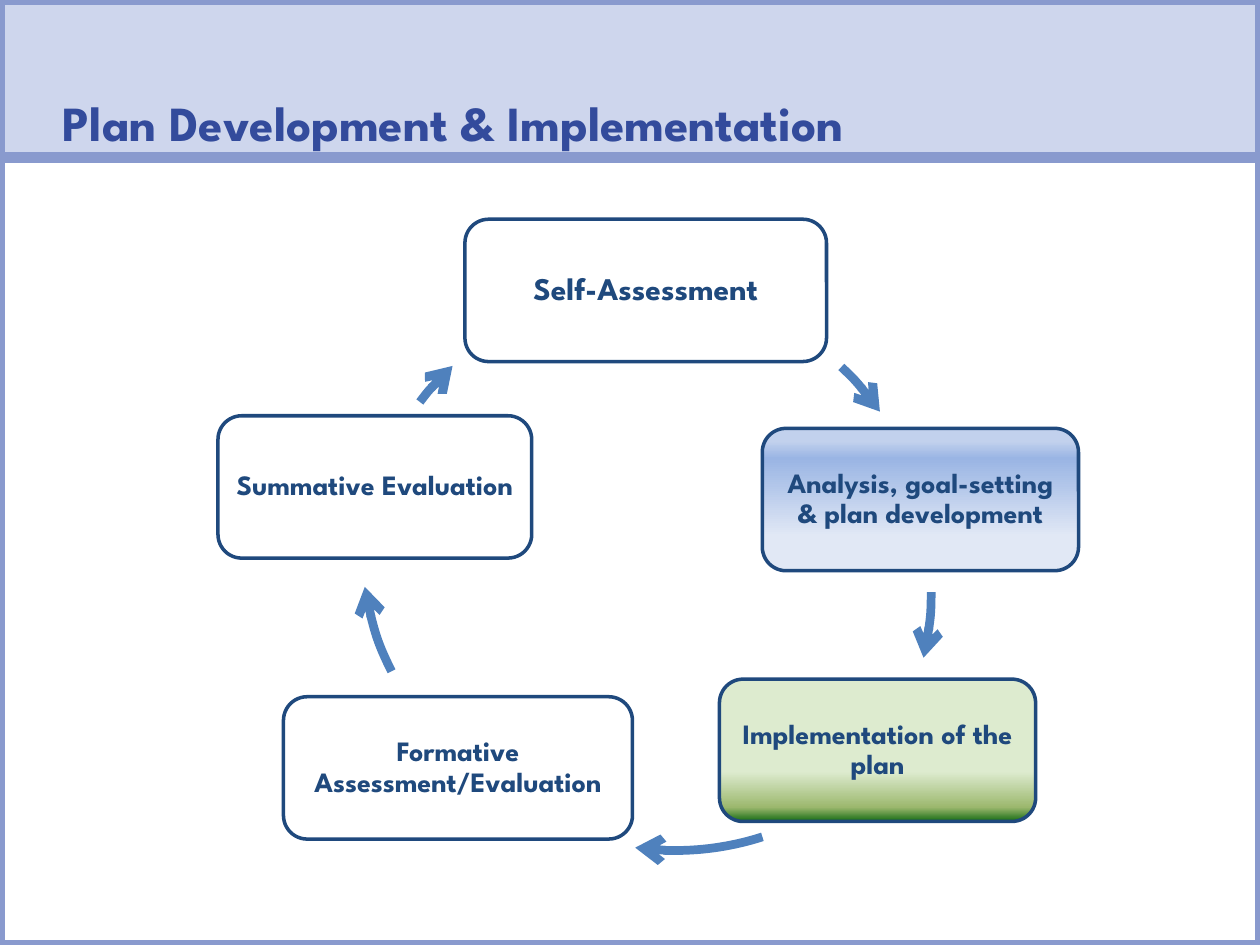
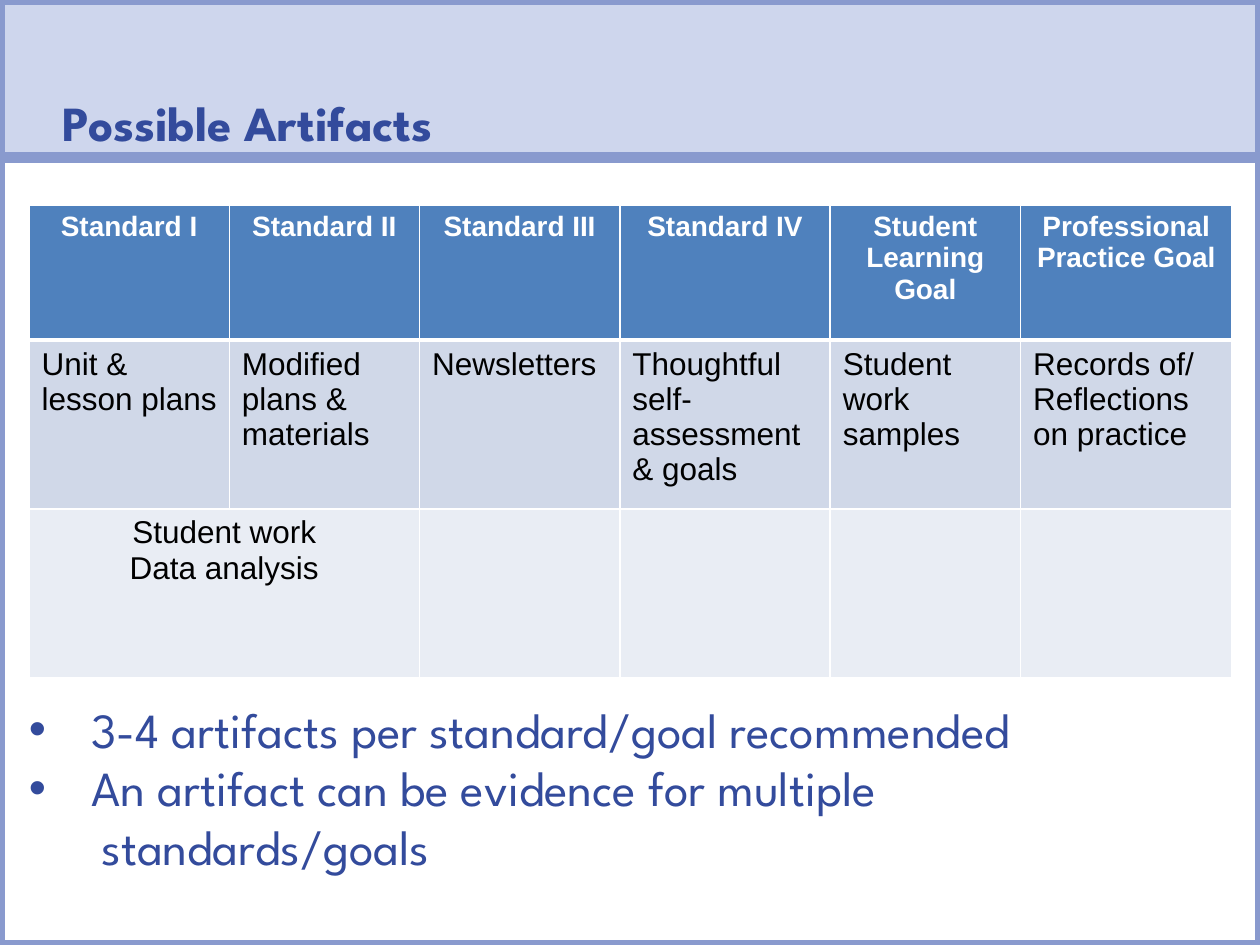
import copy

from lxml import etree
from dataclasses import dataclass
from pptx import Presentation
from pptx import util as u
from pptx.dml.color import RGBColor
from pptx.enum import shapes, text
from pptx.oxml import ns


@dataclass(frozen=True)
class Theme:
    heading: str = "334B9C"
    band: str = "CED6ED"
    frame: str = "899ACE"
    outline: str = "1F497D"
    accent: str = "4F81BD"
    row_dark: str = "D0D8E8"
    row_light: str = "E9EDF4"
    white: str = "FFFFFF"
    black: str = "000000"
    display_font: str = "League Spartan"
    table_font: str = "Arial"
    title_size: int = 28
    large: int = 18
    medium: int = 16


THEME = Theme()
COLUMNS, ROWS = 10, 7.5  # grid of the slide, one inch a step
TITLE_ROWS = 1.25
CIRCLE = 4.52  # diameter of the circles that the cycle arrows follow
BLUE_FADE = [(9, "C2D1ED"), (21, "9AB5E4"), (76, "E1E8F5")]
GREEN_FADE = [(65, "DDEBCF"), (90, "9CB86E"), (100, "156B13")]

# label, left, top, width, type size, gradient
STAGE_HEIGHT = 1.13
STAGES = [
    ("Self-Assessment", 3.69, 1.74, 2.87, THEME.large, None),
    ("Analysis, goal-setting & plan development", 6.05, 3.4, 2.51, THEME.medium, BLUE_FADE),
    ("Implementation of the plan", 5.71, 5.39, 2.51, THEME.medium, GREEN_FADE),
    ("Formative Assessment/Evaluation", 2.25, 5.53, 2.77, THEME.medium, None),
    ("Summative Evaluation", 1.73, 3.3, 2.49, THEME.medium, None),
]
# circle left and top, start and end angle in degrees, clockwise from the right
CYCLE_ARROWS = [
    (2.87, 2.3, 313.2, 325.1),
    (2.87, 2.44, 0, 13.3),
    (3.1, 2.23, 72.2, 98.1),
    (2.87, 2.06, 153.5, 171.4),
    (2.87, 2.3, 217.3, 227.1),
]

ARTIFACT_COLUMNS = [1.59, 1.51, 1.59, 1.67, 1.51, 1.68]
ARTIFACT_ROWS = [1.07, 1.34, 1.34]
ARTIFACTS = [
    ["Standard I", "Standard II", "Standard III", "Standard IV",
     "Student Learning Goal", "Professional Practice Goal"],
    ["Unit & lesson plans", "Modified plans & materials", "Newsletters",
     "Thoughtful self-assessment & goals", "Student work samples",
     "Records of/ Reflections on practice"],
    ["Student work\nData analysis", "", "", "", "", ""],
]
# text, left margin, whether it opens with a bullet
ADVICE = [
    ("3-4 artifacts per standard/goal recommended", 0.5, True),
    ("An artifact can be evidence for multiple", 0.5, True),
    ("standards/goals", 0.58, False),
]


def grid(*steps):
    return [u.Inches(step) for step in steps]


def rgb(value):
    return RGBColor.from_string(value)


def apply(target, values):
    for name, value in values.items():
        setattr(target, name, value)


def add_xml(parent, tag, **attributes):
    return etree.SubElement(parent, ns.qn(tag), attributes)


def set_frame(frame, anchor, margins):
    sides = ("margin_left", "margin_top", "margin_right", "margin_bottom")
    apply(frame, {"word_wrap": True, "vertical_anchor": anchor, **dict(zip(sides, grid(*margins)))})


def write(paragraph, words, size, color, bold=False, font=THEME.display_font, **layout):
    run = paragraph.add_run()
    run.text = words
    apply(run.font, {"name": font, "size": u.Pt(size), "bold": bold})
    run.font.color.rgb = rgb(color)
    apply(paragraph, layout)


def indent(paragraph, left, first=0):
    properties = paragraph._p.get_or_add_pPr()
    properties.set("marL", str(u.Inches(left)))
    properties.set("indent", str(u.Inches(first)))
    return properties


def paint(shape, line, width, fill=None):
    shape.shadow.inherit = False
    shape.line.color.rgb = rgb(line)
    shape.line.width = u.Pt(width)
    if fill:
        shape.fill.solid()
        shape.fill.fore_color.rgb = rgb(fill)
    else:
        shape.fill.background()


def fade(shape, stops):
    """Fill from top to bottom with (percent, colour) stops."""
    shape.fill.gradient()
    shape.fill.gradient_angle = 270
    stop_list = shape._element.spPr.find(ns.qn("a:gradFill")).find(ns.qn("a:gsLst"))
    stop_list.append(copy.deepcopy(stop_list[0]))
    for stop, (percent, color) in zip(shape.fill.gradient_stops, stops):
        stop.position = percent / 100
        stop.color.rgb = rgb(color)


def add_titled_slide(deck, heading):
    slide = deck.slides.add_slide(deck.slide_layouts[6])
    rectangle = shapes.MSO_SHAPE.RECTANGLE
    body = slide.shapes.add_shape(rectangle, *grid(0, TITLE_ROWS, COLUMNS, ROWS - TITLE_ROWS))
    paint(body, THEME.frame, 6)
    band = slide.shapes.add_shape(rectangle, *grid(0, 0, COLUMNS, TITLE_ROWS))
    paint(band, THEME.frame, 6, THEME.band)
    set_frame(band.text_frame, text.MSO_ANCHOR.BOTTOM, (0, 0, 0.5, 0.05))
    title = band.text_frame.paragraphs[0]
    write(title, heading, THEME.title_size, THEME.heading, bold=True,
          alignment=text.PP_ALIGN.LEFT, line_spacing=u.Pt(26))
    indent(title, 0.5)
    return slide


def add_stage(slide, label, left, top, width, size, stops):
    stage = slide.shapes.add_shape(shapes.MSO_SHAPE.ROUNDED_RECTANGLE,
                                   *grid(left, top, width, STAGE_HEIGHT))
    paint(stage, THEME.outline, 2)
    if stops:
        fade(stage, stops)
    set_frame(stage.text_frame, text.MSO_ANCHOR.MIDDLE, (0.07,) * 4)
    write(stage.text_frame.paragraphs[0], label, size, THEME.outline, bold=True,
          alignment=text.PP_ALIGN.CENTER, line_spacing=0.9)


def add_arc_arrow(slide, left, top, *angles):
    arrow = slide.shapes.add_shape(shapes.MSO_SHAPE.ARC, *grid(left, top, CIRCLE, CIRCLE))
    for i, angle in enumerate(angles):
        arrow.adjustments[i] = angle * 0.6  # 60000 units a degree, 100000 units to one
    paint(arrow, THEME.accent, 5)
    add_xml(arrow.line._get_or_add_ln(), "a:tailEnd", type="arrow")


def set_borders(cell, **widths):
    """Draw white cell borders; widths in points by side, in the order L, R, T, B."""
    properties = cell._tc.get_or_add_tcPr()
    for position, (side, width) in enumerate(widths.items()):
        line = etree.Element(ns.qn("a:ln" + side), w=str(u.Pt(width)))
        add_xml(add_xml(line, "a:solidFill"), "a:srgbClr", val=THEME.white)
        properties.insert(position, line)


def add_artifact_table(slide):
    table = slide.shapes.add_table(
        len(ARTIFACT_ROWS), len(ARTIFACT_COLUMNS),
        *grid(0.23, 1.63, sum(ARTIFACT_COLUMNS), sum(ARTIFACT_ROWS))).table
    for column, width in zip(table.columns, ARTIFACT_COLUMNS):
        column.width = u.Inches(width)
    for row, height in zip(table.rows, ARTIFACT_ROWS):
        row.height = u.Inches(height)
    fills = (THEME.accent, THEME.row_dark, THEME.row_light)
    for r, (entries, fill) in enumerate(zip(ARTIFACTS, fills)):
        header = r == 0
        align = text.PP_ALIGN.LEFT if r == 1 else text.PP_ALIGN.CENTER
        for c, entry in enumerate(entries):
            cell = table.cell(r, c)
            cell.fill.solid()
            cell.fill.fore_color.rgb = rgb(fill)
            set_borders(cell, L=1, R=1, T=3 if r == 1 else 1, B=3 if header else 1)
            for i, words in enumerate(entry.split("\n") if entry else []):
                frame = cell.text_frame
                paragraph = frame.add_paragraph() if i else frame.paragraphs[0]
                write(paragraph, words, THEME.medium if header else THEME.large,
                      THEME.white if header else THEME.black, bold=header,
                      font=THEME.table_font, alignment=align)
    table.cell(2, 0).merge(table.cell(2, 1))


def add_advice(slide):
    frame = slide.shapes.add_textbox(*grid(0.13, 5.5, 8.08, 1.6)).text_frame
    set_frame(frame, text.MSO_ANCHOR.TOP, (0.1, 0.05, 0.1, 0.05))
    for i, (words, left, bulleted) in enumerate(ADVICE):
        paragraph = frame.add_paragraph() if i else frame.paragraphs[0]
        write(paragraph, words, THEME.title_size, THEME.heading)
        properties = indent(paragraph, left, -left if bulleted else 0)
        if bulleted:
            add_xml(properties, "a:buFont", typeface=THEME.table_font)
            add_xml(properties, "a:buChar", char="•")


def main():
    deck = Presentation()
    deck.slide_width, deck.slide_height = grid(COLUMNS, ROWS)

    cycle = add_titled_slide(deck, "Plan Development & Implementation")
    for stage, arrow in zip(STAGES, CYCLE_ARROWS):
        add_stage(cycle, *stage)
        add_arc_arrow(cycle, *arrow)

    artifacts = add_titled_slide(deck, "Possible Artifacts")
    add_artifact_table(artifacts)
    add_advice(artifacts)

    deck.save("out.pptx")


if __name__ == "__main__":
    main()
